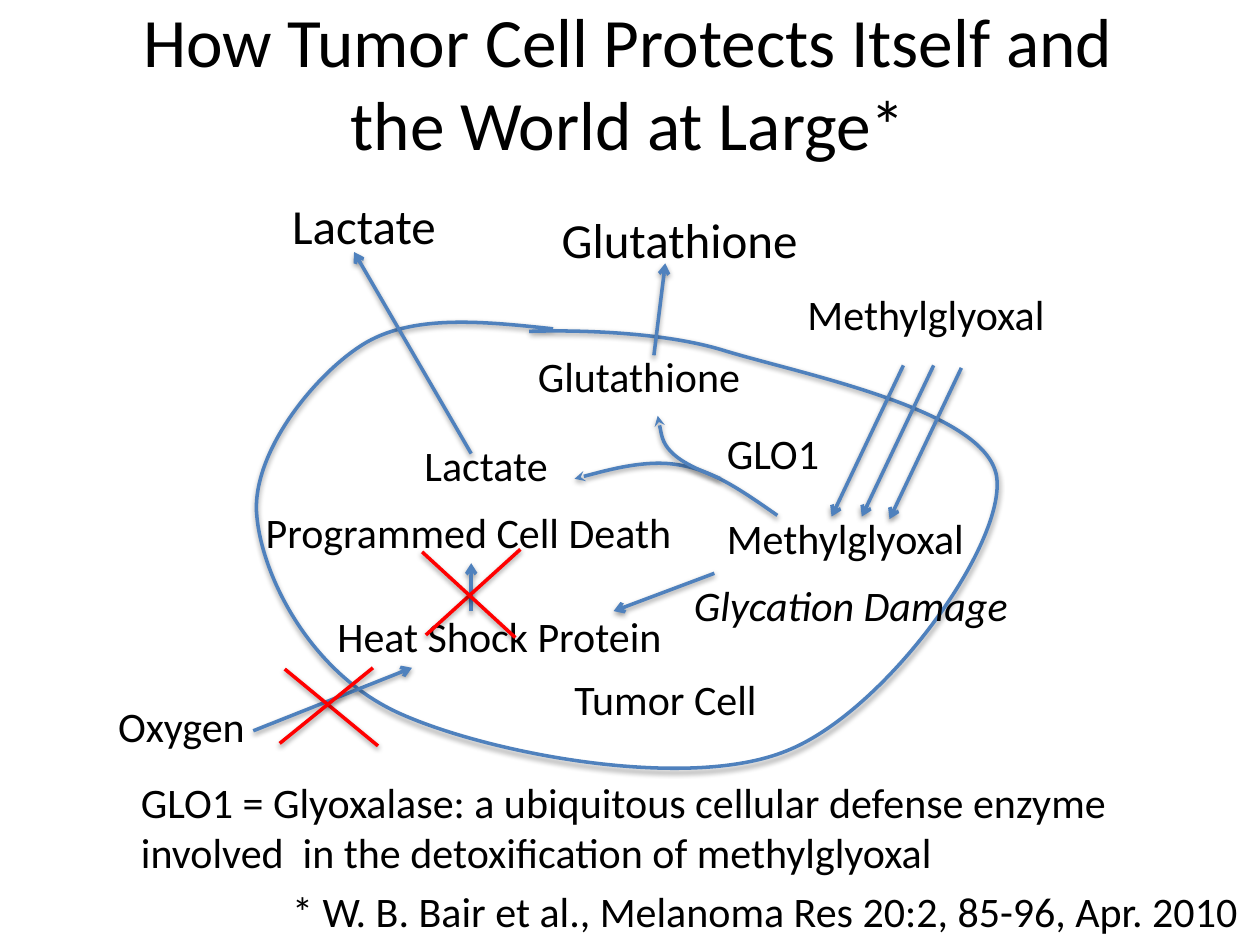
from lxml.etree import SubElement as Sub
from pptx import Presentation
from pptx.dml.color import RGBColor
from pptx.enum.shapes import MSO_CONNECTOR as Link
from pptx.enum.text import MSO_ANCHOR as Anchor, MSO_AUTO_SIZE as Fit, PP_ALIGN as Align
from pptx.oxml.ns import qn
from pptx.util import Inches, Pt

BLUE, RED, BLACK = "4F81BD", "FF0000", "000000"


def paint(code):
    return RGBColor.from_string(code)


def write(frame, text, size=24, color=BLACK, font="Calibri", slant=False, align=Align.LEFT):
    par = frame.paragraphs[0]
    par.alignment = align
    run = par.add_run()
    run.text = text
    run.font.size = Pt(size)
    run.font.name = font
    run.font.italic = slant
    run.font.color.rgb = paint(color)


class Sketch:
    def __init__(self, slide, width=2):
        self.slide = slide
        self.shapes = slide.shapes
        self.width = width

    def title(self, text, x, y, w, h):
        box = self.shapes.title
        box.left, box.top, box.width, box.height = map(Inches, (x, y, w, h))
        frame = box.text_frame
        frame.word_wrap = True
        frame.auto_size = Fit.NONE
        frame.vertical_anchor = Anchor.MIDDLE
        write(frame, text, size=39.6, align=Align.CENTER)

    def text(self, text, x, y, w, h=0.5, wrap=True, **form):
        box = self.shapes.add_textbox(*map(Inches, (x, y, w, h)))
        frame = box.text_frame
        frame.word_wrap = wrap
        frame.auto_size = Fit.SHAPE_TO_FIT_TEXT
        write(frame, text, **form)

    def stroke(self, shape, color, head):
        shape.line.color.rgb = paint(color)
        shape.line.width = Pt(self.width)
        props = shape._element.spPr
        if head:
            Sub(props.find(qn("a:ln")), qn("a:tailEnd"), type=head)
        effect = Sub(props, qn("a:effectLst"))
        shade = Sub(effect, qn("a:outerShdw"), blurRad=str(Pt(3.1)), dist=str(Pt(1.6)),
                    dir="5400000", rotWithShape="0")
        tint = Sub(shade, qn("a:srgbClr"), val=BLACK)
        Sub(tint, qn("a:alpha"), val="38000")

    def line(self, start, end, color=BLUE, head="arrow", group=None):
        shapes = group.shapes if group else self.shapes
        link = shapes.add_connector(Link.STRAIGHT, *map(Inches, (*start, *end)))
        self.stroke(link, color, head)

    def lines(self, pairs, **form):
        group = self.shapes.add_group_shape()
        for start, end in pairs:
            self.line(start, end, group=group, **form)

    def curve(self, points, head=None):
        first, *rest = [tuple(map(Inches, point)) for point in points]
        pen = self.shapes.build_freeform(*first)
        pen.add_line_segments(rest, close=False)
        shape = pen.convert_to_shape()
        path = shape._element.spPr.find(".//" + qn("a:path"))
        steps = path.findall(qn("a:lnTo"))
        for i in range(0, len(steps), 3):
            bend = Sub(path, qn("a:cubicBezTo"))
            for step in steps[i:i + 3]:
                bend.append(step[0])
                path.remove(step)
        shape.fill.background()
        self.stroke(shape, BLUE, head)


def main():
    deck = Presentation()
    deck.slide_width, deck.slide_height = Inches(10), Inches(7.5)
    art = Sketch(deck.slides.add_slide(deck.slide_layouts[5]))

    art.title("How Tumor Cell Protects Itself and the World at Large*", 1.02, 0.02, 7.93, 1.25)
    art.curve([
        (4.39, 2.61), (3.83, 2.55), (3.26, 2.49), (2.87, 2.74),
        (2.48, 2.99), (1.98, 3.62), (2.04, 4.11),
        (2.09, 4.6), (2.48, 5.36), (3.19, 5.67),
        (3.89, 5.98), (5.45, 6.28), (6.24, 5.96),
        (7.03, 5.65), (7.99, 4.31), (7.91, 3.78),
        (7.82, 3.25), (6.36, 2.97), (5.74, 2.78),
        (5.12, 2.59), (4.2, 2.63), (4.2, 2.63),
    ])

    art.text("Lactate", 3.27, 3.44, 1.19, wrap=False)
    art.text("Tumor Cell", 4.46, 5.3, 1.85)
    for x, y in ((6.31, 2.24), (5.67, 4.02)):
        art.text("Methylglyoxal", x, y, 2.12)
    art.text("Heat Shock Protein", 2.58, 4.8, 2.8, wrap=False)
    art.text("Glutathione", 4.17, 2.73, 2.04)
    art.text("Lactate", 2.22, 1.5, 1.36, 0.57, wrap=False, size=28)
    art.text("Glutathione", 4.36, 1.61, 2.24, 0.57, size=28)
    art.text("Programmed Cell Death", 2.01, 3.97, 3.45, wrap=False)
    art.text("GLO1", 5.67, 3.34, 1.06)
    art.text("Oxygen", 0.84, 5.51, 2.04)

    art.curve([(6.17, 4.09), (5.91, 3.91), (5.66, 3.73), (5.39, 3.69),
               (5.12, 3.64), (4.56, 3.8), (4.56, 3.8)], head="stealth")
    art.curve([(5.72, 3.8), (5.57, 3.74), (5.42, 3.68), (5.33, 3.59),
               (5.25, 3.51), (5.22, 3.3), (5.22, 3.3)], head="stealth")
    for start, end in (
        ((5.67, 4.55), (4.87, 4.85)),
        ((5.19, 2.82), (5.28, 2.09)),
        ((3.74, 3.6), (2.81, 2)),
        ((3.74, 4.85), (3.74, 4.47)),
        ((2.01, 5.8), (3.27, 5.3)),
    ):
        art.line(start, end)

    for cross in (
        (((3.38, 5.04), (4.13, 4.36)), ((4.09, 5.06), (3.35, 4.38))),
        (((2.26, 5.31), (3, 5.92)), ((2.96, 5.3), (2.22, 5.9))),
    ):
        art.lines(cross, color=RED, head=None)

    art.text("Glycation Damage", 5.41, 4.55, 2.76, slant=True)
    art.lines([((x, y), (x - 0.57, y + 1.2))
               for x, y in ((7.17, 2.9), (7.41, 2.9), (7.63, 2.92))])
    art.text("GLO1 = Glyoxalase: a ubiquitous cellular defense enzyme involved  in "
             "the detoxification of methylglyoxal", 1.02, 6.11, 7.93, 0.91)
    art.text("* W. B. Bair et al., Melanoma Res 20:2, 85-96, Apr. 2010",
             2.22, 6.98, 7.78, wrap=False)
    deck.save("out.pptx")


if __name__ == "__main__":
    main()
